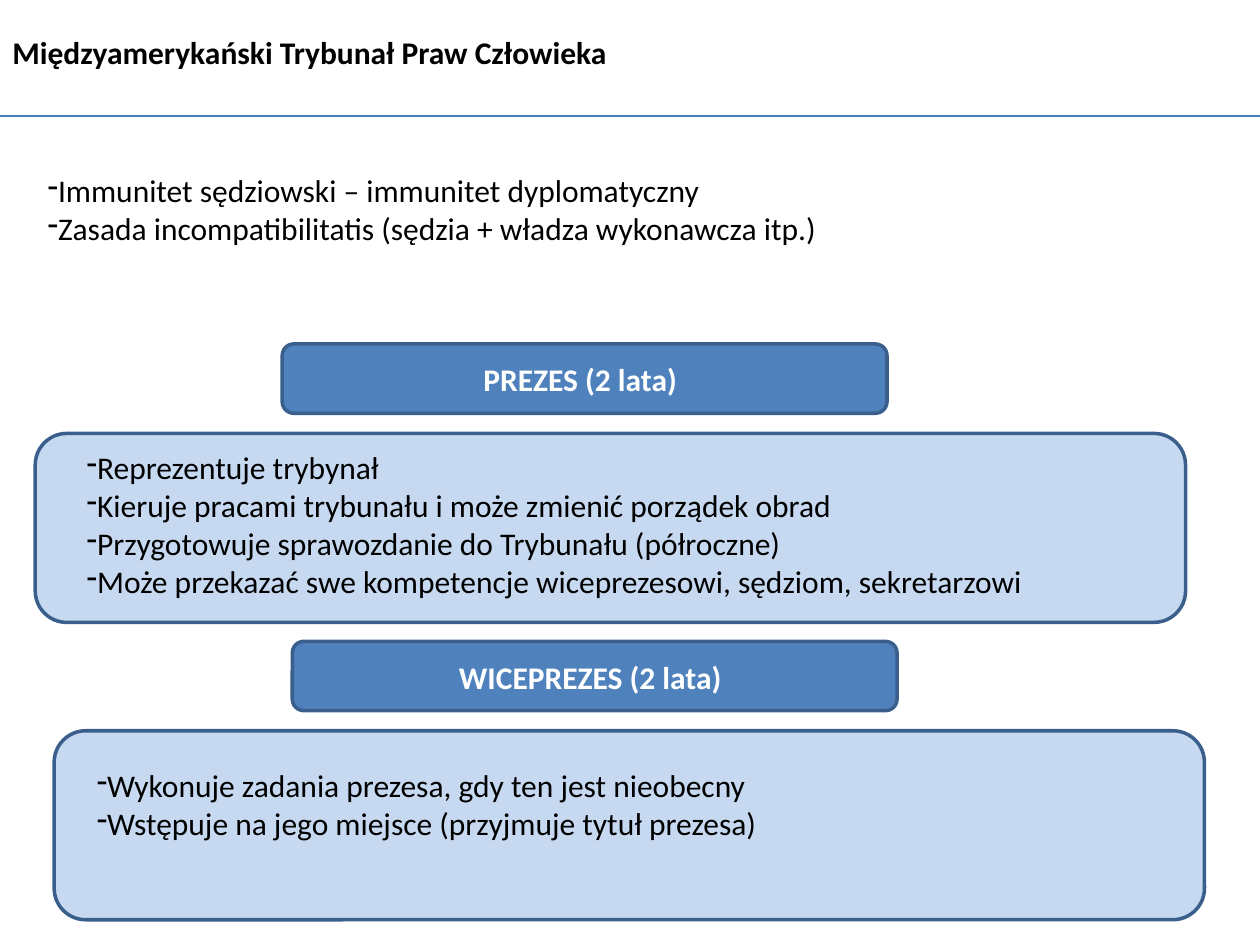
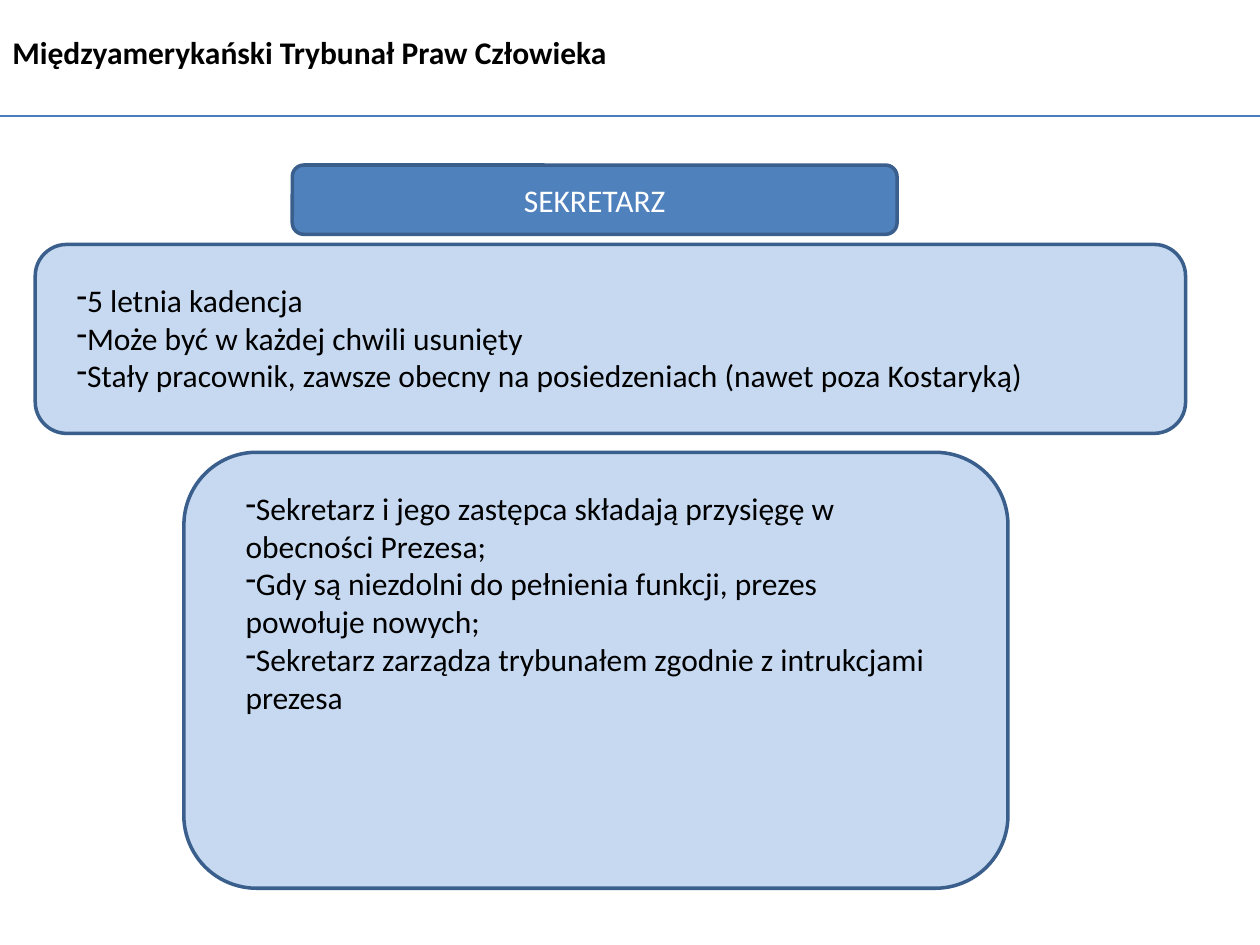
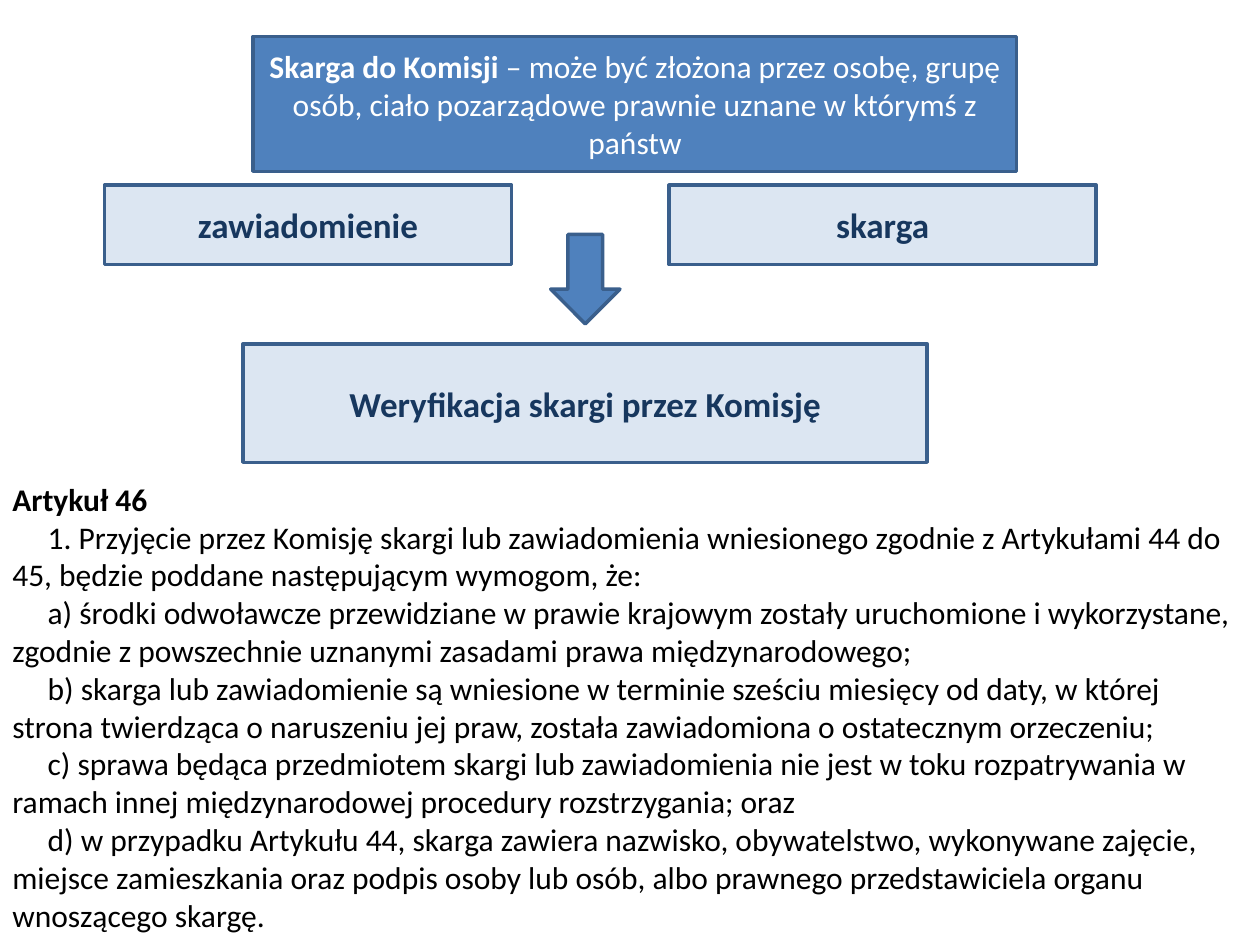
from lxml.etree import SubElement
from pptx import Presentation
from pptx.dml.color import RGBColor
from pptx.enum.shapes import MSO_CONNECTOR, MSO_SHAPE
from pptx.enum.text import MSO_ANCHOR, PP_ALIGN
from pptx.oxml.ns import qn
from pptx.util import Inches, Pt

FONT = "Calibri"
BLACK = "000000"
WHITE = "FFFFFF"
NAVY = "17375E"
BLUE = "4F81BD"
LIGHT_BLUE = "C6D9F1"
PALE_BLUE = "DCE6F2"
OUTLINE = "3A5F8C"
RULE = "4B7EBC"

HEADING = "Międzyamerykański Trybunał Praw Człowieka"
LABEL_SIZE = (4.8, 0.55)
PANEL_SIZE = (9.13, 1.5)
STEP_TOP, STEP_HEIGHT = 1.47, 0.63

IMMUNITY = [
    "Immunitet sędziowski – immunitet dyplomatyczny",
    "Zasada incompatibilitatis (sędzia + władza wykonawcza itp.)",
]
PRESIDENT = [
    "Reprezentuje trybynał",
    "Kieruje pracami trybunału i może zmienić porządek obrad",
    "Przygotowuje sprawozdanie do Trybunału (półroczne)",
    "Może przekazać swe kompetencje wiceprezesowi, sędziom, sekretarzowi",
]
VICE_PRESIDENT = [
    "Wykonuje zadania prezesa, gdy ten jest nieobecny",
    "Wstępuje na jego miejsce (przyjmuje tytuł prezesa)",
]
SECRETARY = [
    "5 letnia kadencja",
    "Może być w każdej chwili usunięty",
    "Stały pracownik, zawsze obecny na posiedzeniach (nawet poza Kostaryką)",
]
SECRETARY_DUTIES = [
    "Sekretarz i jego zastępca składają przysięgę w obecności Prezesa;",
    "Gdy są niezdolni do pełnienia funkcji, prezes powołuje nowych;",
    "Sekretarz zarządza trybunałem zgodnie z intrukcjami prezesa",
]
ARTICLE_TITLE = "Artykuł 46"
ARTICLE_POINTS = [
    "1. Przyjęcie przez Komisję skargi lub zawiadomienia wniesionego zgodnie z "
    "Artykułami 44 do 45, będzie poddane następującym wymogom, że:",
    "a) środki odwoławcze przewidziane w prawie krajowym zostały uruchomione i "
    "wykorzystane, zgodnie z powszechnie uznanymi zasadami prawa międzynarodowego;",
    "b) skarga lub zawiadomienie są wniesione w terminie sześciu miesięcy od daty, "
    "w której strona twierdząca o naruszeniu jej praw, została zawiadomiona o "
    "ostatecznym orzeczeniu;",
    "c) sprawa będąca przedmiotem skargi lub zawiadomienia nie jest w toku "
    "rozpatrywania w ramach innej międzynarodowej procedury rozstrzygania; oraz",
    "d) w przypadku Artykułu 44, skarga zawiera nazwisko, obywatelstwo, wykonywane "
    "zajęcie, miejsce zamieszkania oraz podpis osoby lub osób, albo prawnego "
    "przedstawiciela organu wnoszącego skargę.",
]


def color(hex_value):
    return RGBColor.from_string(hex_value)


def format_runs(paragraph, size=18, font_color=BLACK, bold=False):
    for run in paragraph.runs:
        run.font.name = FONT
        run.font.size = Pt(size)
        run.font.bold = bold
        run.font.color.rgb = color(font_color)


def add_text(slide, left, top, width, height, lines, align=PP_ALIGN.LEFT, **style):
    box = slide.shapes.add_textbox(
        Inches(left), Inches(top), Inches(width), Inches(height))
    text_frame = box.text_frame
    text_frame.word_wrap = True
    text_frame.text = "\n".join(lines)
    for paragraph in text_frame.paragraphs:
        paragraph.alignment = align
        format_runs(paragraph, **style)
    return text_frame


def add_dash_list(slide, left, top, width, height, lines):
    text_frame = add_text(slide, left, top, width, height, lines)
    for paragraph in text_frame.paragraphs:
        properties = paragraph._p.get_or_add_pPr()
        SubElement(properties, qn("a:buFontTx"))
        SubElement(properties, qn("a:buChar")).set("char", "-")


def add_block(slide, kind, left, top, width, height, fill):
    shape = slide.shapes.add_shape(
        kind, Inches(left), Inches(top), Inches(width), Inches(height))
    shape.shadow.inherit = False
    shape.fill.solid()
    shape.fill.fore_color.rgb = color(fill)
    shape.line.color.rgb = color(OUTLINE)
    shape.line.width = Pt(2)
    return shape


def write_in_block(shape, text, **style):
    text_frame = shape.text_frame
    text_frame.word_wrap = True
    text_frame.vertical_anchor = MSO_ANCHOR.MIDDLE
    text_frame.text = text
    paragraph = text_frame.paragraphs[0]
    paragraph.alignment = PP_ALIGN.CENTER
    format_runs(paragraph, **style)
    return paragraph


def add_label(slide, left, top):
    return add_block(
        slide, MSO_SHAPE.ROUNDED_RECTANGLE, left, top, *LABEL_SIZE, BLUE)


def add_captioned_label(slide, left, top, caption):
    add_label(slide, left, top)
    add_text(slide, left + 0.24, top + 0.08, 4.25, 0.4, [caption],
             PP_ALIGN.CENTER, font_color=WHITE, bold=True)


def add_panel(slide, left, top, width=PANEL_SIZE[0], height=PANEL_SIZE[1]):
    add_block(slide, MSO_SHAPE.ROUNDED_RECTANGLE, left, top, width, height, LIGHT_BLUE)


def add_step(slide, left, top, width, height, text):
    shape = add_block(slide, MSO_SHAPE.RECTANGLE, left, top, width, height, PALE_BLUE)
    write_in_block(shape, text, size=20, font_color=NAVY, bold=True)


def add_heading(slide):
    add_text(slide, 0, 0.21, 9.57, 0.4, [HEADING], bold=True)
    rule = slide.shapes.add_connector(
        MSO_CONNECTOR.STRAIGHT, Inches(-0.51), Inches(0.92), Inches(12.64), Inches(0.92))
    rule.line.color.rgb = color(RULE)
    rule.line.width = Pt(0.75)
    SubElement(rule._element.spPr, qn("a:effectLst"))


def add_article(slide):
    text_frame = add_text(
        slide, 0, 3.76, 10, 3.74, [ARTICLE_TITLE] + ARTICLE_POINTS)
    title, *points = text_frame.paragraphs
    format_runs(title, bold=True)
    for paragraph in points:
        paragraph._p.get_or_add_pPr().set("indent", str(Inches(0.28)))


def build_presidents(slide):
    add_heading(slide)
    add_dash_list(slide, 0.28, 1.31, 7.4, 0.71, IMMUNITY)
    add_captioned_label(slide, 2.24, 2.73, "PREZES (2 lata)")
    add_captioned_label(slide, 2.32, 5.09, "WICEPREZES (2 lata)")
    add_panel(slide, 0.28, 3.44)
    add_dash_list(slide, 0.59, 3.51, 8.43, 1.31, PRESIDENT)
    add_panel(slide, 0.43, 5.8)
    add_dash_list(slide, 0.67, 6.03, 7.87, 0.71, VICE_PRESIDENT)


def build_secretary(slide):
    add_heading(slide)
    write_in_block(add_label(slide, 2.32, 1.31), "SEKRETARZ", font_color=WHITE)
    add_panel(slide, 0.28, 1.94)
    add_dash_list(slide, 0.51, 2.18, 8.27, 1.01, SECRETARY)
    add_panel(slide, 1.46, 3.59, 6.54, 3.46)
    add_dash_list(slide, 1.85, 3.83, 5.59, 1.92, SECRETARY_DUTIES)


def build_complaint(slide):
    complaint = add_block(slide, MSO_SHAPE.RECTANGLE, 2.01, 0.29, 6.06, 1.07, BLUE)
    paragraph = write_in_block(
        complaint, "Skarga do Komisji ", font_color=WHITE, bold=True)
    lead = paragraph.runs[0]
    paragraph.add_run().text = (
        "– może być złożona przez osobę, grupę osób, ciało pozarządowe "
        "prawnie uznane w którymś z państw")
    format_runs(paragraph, font_color=WHITE)
    lead.font.bold = True
    add_step(slide, 1.93, 2.73, 5.43, 0.94, "Weryfikacja skargi przez Komisję")
    add_step(slide, 0.83, STEP_TOP, 3.23, STEP_HEIGHT, "zawiadomienie")
    add_step(slide, 5.31, STEP_TOP, 3.39, STEP_HEIGHT, "skarga")
    add_block(slide, MSO_SHAPE.DOWN_ARROW, 4.37, 1.86, 0.55, 0.71, BLUE)
    add_article(slide)


def main():
    presentation = Presentation()
    presentation.slide_width = Inches(10)
    presentation.slide_height = Inches(7.5)
    blank_layout = presentation.slide_layouts[6]
    for build in (build_presidents, build_secretary, build_complaint):
        build(presentation.slides.add_slide(blank_layout))
    presentation.save("out.pptx")


if __name__ == "__main__":
    main()
